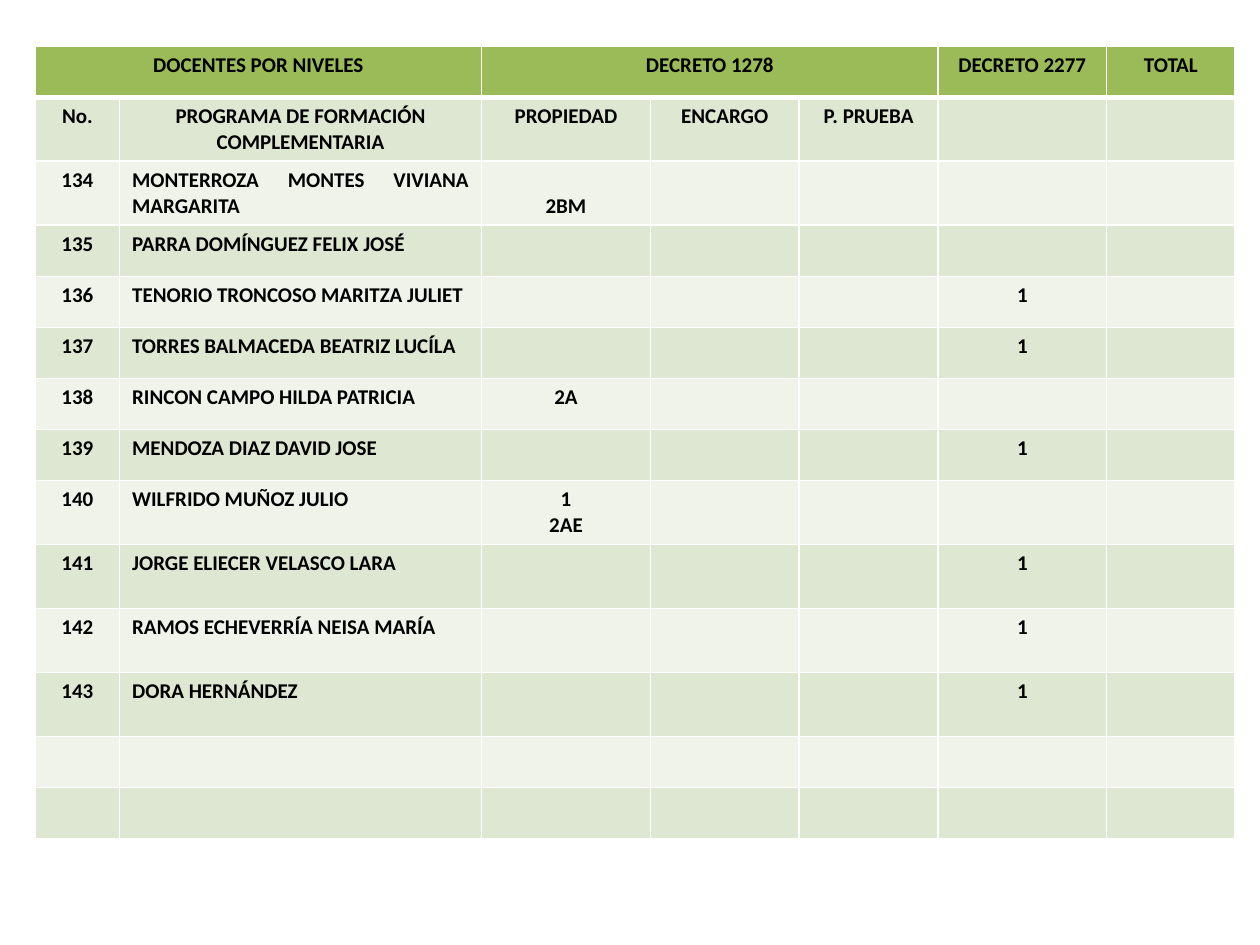
from lxml import etree
from pptx import Presentation
from pptx.dml.color import RGBColor
from pptx.enum.text import MSO_ANCHOR, PP_ALIGN
from pptx.oxml.ns import qn
from pptx.util import Cm, Pt

CENTER, LEFT, JUSTIFY = PP_ALIGN.CENTER, PP_ALIGN.LEFT, PP_ALIGN.JUSTIFY
BOTTOM = MSO_ANCHOR.BOTTOM

GREEN = RGBColor(0x9B, 0xBB, 0x59)
BAND_DARK = RGBColor(0xDE, 0xE7, 0xD1)
BAND_LIGHT = RGBColor(0xEF, 0xF3, 0xEA)
WHITE = RGBColor(0xFF, 0xFF, 0xFF)
BLACK = RGBColor(0x00, 0x00, 0x00)

COLUMN_WIDTHS = [1.7, 7.3, 3.4, 3, 2.8, 3.4, 2.59]
ROW_HEIGHT, TALL_ROW_HEIGHT = 1.03, 1.29
TALL_ROWS = {1, 2, 8, 9, 10, 11}
NAME_COLUMN, PROPERTY_COLUMN = 1, 2

HEADER = ["DOCENTES POR NIVELES", "", "DECRETO 1278", "", "", "DECRETO 2277", "TOTAL"]
SUBHEADER = ["No.", "PROGRAMA DE FORMACIÓN COMPLEMENTARIA", "PROPIEDAD", "ENCARGO",
             "P. PRUEBA", "", ""]
FIRST_NUMBER = 134
# Name, PROPIEDAD (decree 1278), decree 2277
TEACHERS = [
    ("MONTERROZA MONTES VIVIANA MARGARITA", "2BM", ""),
    ("PARRA DOMÍNGUEZ FELIX JOSÉ", "", ""),
    ("TENORIO TRONCOSO MARITZA JULIET", "", "1"),
    ("TORRES BALMACEDA BEATRIZ LUCÍLA", "", "1"),
    ("RINCON CAMPO HILDA PATRICIA", "2A", ""),
    ("MENDOZA DIAZ DAVID JOSE", "", "1"),
    ("WILFRIDO MUÑOZ JULIO", "1\n2AE", ""),
    ("JORGE ELIECER VELASCO LARA", "", "1"),
    ("RAMOS ECHEVERRÍA NEISA MARÍA", "", "1"),
    ("DORA HERNÁNDEZ", "", "1"),
]
EMPTY_ROWS = 2


class SlideBuilder:
    """Holds the text style and the slide being built."""

    font_name = "Calibri"
    font_size = Pt(12)

    def __init__(self, slide):
        self.slide = slide

    def table(self, left, top, widths, heights):
        shape = self.slide.shapes.add_table(
            len(heights), len(widths), Cm(left), Cm(top), Cm(sum(widths)), Cm(sum(heights)))
        table = shape.table
        for column, width in zip(table.columns, widths):
            column.width = Cm(width)
        for row, height in zip(table.rows, heights):
            row.height = Cm(height)
        return table

    def cell(self, cell, text, fill, alignment=CENTER, bottom_border=1):
        cell.fill.solid()
        cell.fill.fore_color.rgb = fill
        self.borders(cell, bottom_border)
        if not text:
            return
        cell.text_frame.text = text
        for paragraph in cell.text_frame.paragraphs:
            paragraph.alignment = alignment
            for run in paragraph.runs:
                run.font.name = self.font_name
                run.font.size = self.font_size
                run.font.bold = True
                run.font.color.rgb = BLACK

    def borders(self, cell, bottom_border):
        properties = cell._tc.get_or_add_tcPr()
        edges = [("a:lnL", 1), ("a:lnR", 1), ("a:lnT", 1), ("a:lnB", bottom_border)]
        for position, (tag, width) in enumerate(edges):
            line = etree.Element(qn(tag), w=str(Pt(width)))
            fill = etree.SubElement(line, qn("a:solidFill"))
            etree.SubElement(fill, qn("a:srgbClr"), val=str(WHITE))
            properties.insert(position, line)


def main():
    presentation = Presentation()
    presentation.slide_width, presentation.slide_height = Cm(25.4), Cm(19.05)
    slide = presentation.slides.add_slide(presentation.slide_layouts[6])
    builder = SlideBuilder(slide)

    # Table contents
    rows = [HEADER, SUBHEADER]
    for number, (name, property_level, decree_2277) in enumerate(TEACHERS, FIRST_NUMBER):
        rows.append([str(number), name, property_level, "", "", decree_2277, ""])
    rows += [[""] * len(COLUMN_WIDTHS)] * EMPTY_ROWS

    # Grid
    heights = [TALL_ROW_HEIGHT if index in TALL_ROWS else ROW_HEIGHT
               for index in range(len(rows))]
    table = builder.table(0.71, 0.93, COLUMN_WIDTHS, heights)

    # Header row
    for column, text in enumerate(HEADER):
        builder.cell(table.cell(0, column), text, GREEN, bottom_border=3)
    table.cell(0, 0).merge(table.cell(0, 1))
    table.cell(0, 2).merge(table.cell(0, 4))

    # Banded body rows
    for row, texts in enumerate(rows[1:], 1):
        fill = BAND_DARK if row % 2 else BAND_LIGHT
        for column, text in enumerate(texts):
            is_name = column == NAME_COLUMN and row > 1
            builder.cell(table.cell(row, column), text, fill, JUSTIFY if is_name else CENTER)

    # Exceptions: one level sits on the second line, one name is left aligned
    table.cell(2, PROPERTY_COLUMN).vertical_anchor = BOTTOM
    table.cell(4, NAME_COLUMN).text_frame.paragraphs[0].alignment = LEFT

    presentation.save("out.pptx")


if __name__ == "__main__":
    main()
